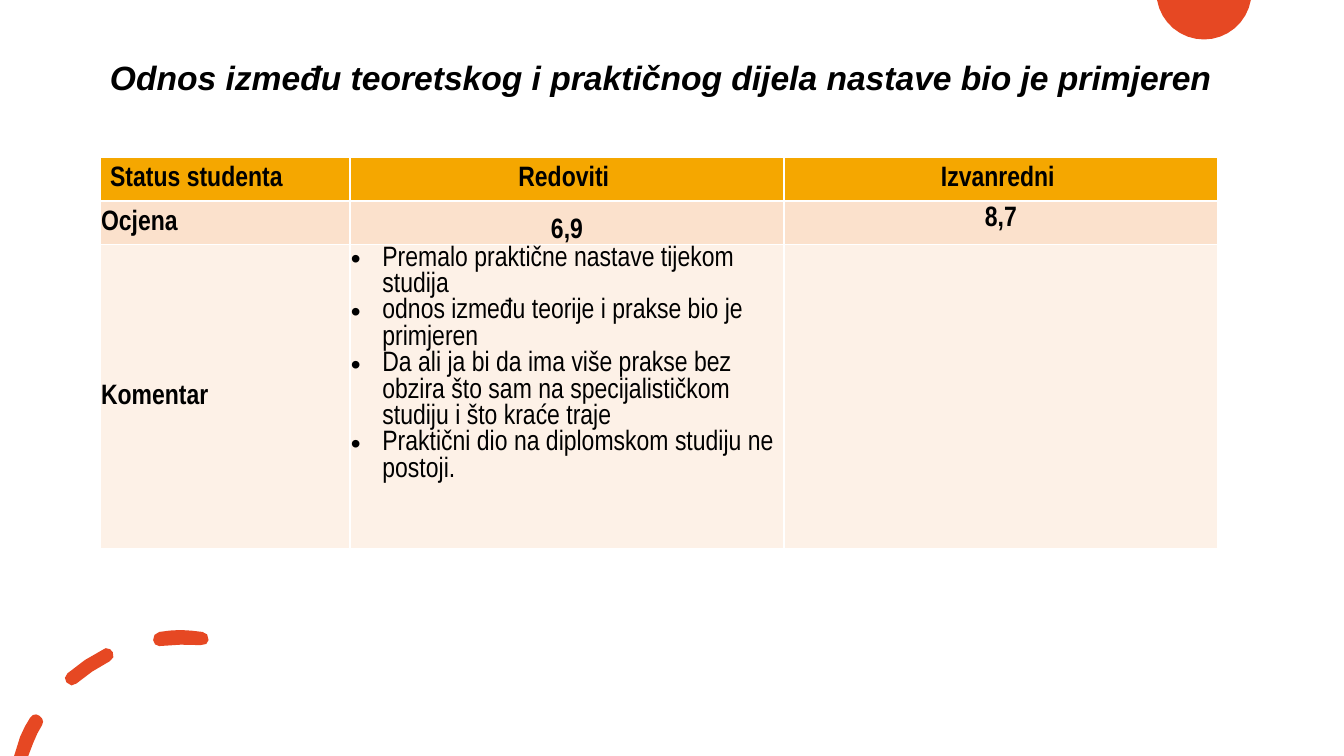
from math import asin, cos, pi, sin

from lxml import etree
from pptx import Presentation
from pptx.dml.color import RGBColor
from pptx.enum.text import MSO_ANCHOR, PP_ALIGN
from pptx.oxml.ns import qn
from pptx.util import Pt

LEFT, CENTER = PP_ALIGN.LEFT, PP_ALIGN.CENTER
TOP, MIDDLE, BOTTOM = MSO_ANCHOR.TOP, MSO_ANCHOR.MIDDLE, MSO_ANCHOR.BOTTOM
BLACK = RGBColor(0x00, 0x00, 0x00)
RED = RGBColor(0xE6, 0x48, 0x23)
AMBER = RGBColor(0xF5, 0xA7, 0x00)
PEACH = RGBColor(0xFB, 0xE1, 0xCC)
CREAM = RGBColor(0xFD, 0xF1, 0xE7)

prs = Presentation()
prs.slide_width, prs.slide_height = Pt(960), Pt(540)
slide = prs.slides.add_slide(prs.slide_layouts[6])


def add_red_outline(*contours):
    """Draw one red shape from closed contours of points."""
    scaled = [[(round(x * 100), round(y * 100)) for x, y in contour] for contour in contours]
    builder = slide.shapes.build_freeform(*scaled[0][0], scale=Pt(1) / 100)
    for i, (start, *rest) in enumerate(scaled):
        if i:
            builder.move_to(*start)
        builder.add_line_segments(rest)
    outline = builder.convert_to_shape()
    outline.shadow.inherit = False
    outline.fill.solid()
    outline.fill.fore_color.rgb = RED
    outline.line.fill.background()


def write(paragraph, text, **font_format):
    run = paragraph.add_run()
    run.text = text
    run.font.color.rgb = BLACK
    for name, value in font_format.items():
        setattr(run.font, name, value)


# Disc cut off by the top edge
DISC_X, DISC_Y, DISC_R = 860, -5.8, 34
STEPS = 16
edge = asin(-DISC_Y / DISC_R)
disc_angles = [edge + (pi - 2 * edge) * i / STEPS for i in range(STEPS + 1)]
add_red_outline([(DISC_X + DISC_R * cos(a), DISC_Y + DISC_R * sin(a)) for a in disc_angles])

# Dashed arc in the bottom left corner
low_dash = [(25.9, 510.3), (23.5, 510.8), (21.6, 512.6), (17.8, 519), (14.4, 526.3), (10.1, 540),
            (20.2, 540), (23.8, 530.6), (26.7, 524), (30.2, 517.7), (30.8, 515.5), (30.2, 513.4),
            (28.1, 511.2)]
middle_dash = [(75.6, 463), (74.2, 463.7), (60.8, 471.4), (48.2, 481), (46.4, 484.2), (47.5, 487.4),
               (51.1, 489.6), (54.7, 488.2), (65.9, 479.7), (78.5, 472.3), (81, 469.5),
               (80.6, 465.8), (78.6, 463.7)]
top_dash = [(128.9, 450), (121.4, 450.4), (113.8, 451.4), (110.4, 453.5), (109.4, 457.2),
            (110.8, 460.3), (113.8, 461.5), (129, 460.5), (143.3, 460.8), (147.4, 460),
            (149, 457.2), (148, 453.2), (144.7, 451.4), (137, 450.5)]
add_red_outline(low_dash, middle_dash, top_dash)

title = slide.shapes.add_textbox(Pt(71.5), Pt(16.4), Pt(828), Pt(81.4)).text_frame
title.word_wrap = True
title.vertical_anchor = MIDDLE
title.paragraphs[0].line_spacing = 0.9
write(title.paragraphs[0], "Odnos između teoretskog i praktičnog dijela nastave bio je primjeren",
      name="Arial", size=Pt(24), bold=True, italic=True)

# Ratings table: each cell is its lines, alignment, anchor and whether its margins are tight
COLUMN_WIDTHS = [178.5, 310, 310]
ROW_HEIGHTS = [18.7, 29.5, 67]
ROW_FILLS = [AMBER, PEACH, CREAM]
COMMENTS = [
    "Premalo praktične nastave tijekom studija",
    "odnos između teorije i prakse bio je primjeren",
    "Da ali ja bi da ima više prakse bez obzira što sam na specijalističkom studiju i što kraće traje",
    "Praktični dio na diplomskom studiju ne postoji.",
]
ratings = [
    [(["Status studenta"], LEFT, MIDDLE, False),
     (["Redoviti "], CENTER, MIDDLE, False),
     (["Izvanredni "], CENTER, MIDDLE, False)],
    [(["Ocjena"], LEFT, MIDDLE, True),
     (["6,9"], CENTER, BOTTOM, True),
     (["8,7"], CENTER, TOP, False)],
    [(["Komentar"], LEFT, MIDDLE, True),
     (COMMENTS, LEFT, TOP, True),
     ([], LEFT, TOP, False)],
]
TIGHT = {"margin_left": Pt(0.7), "margin_right": Pt(0.7), "margin_top": Pt(0.7), "margin_bottom": Pt(0)}
BULLET_INDENT = Pt(22.5)
TABLE_HEIGHT = Pt(279.4)

ratings_frame = slide.shapes.add_table(3, 3, Pt(71.5), Pt(112.3), Pt(sum(COLUMN_WIDTHS)), TABLE_HEIGHT)
table = ratings_frame.table
for column, width in zip(table.columns, COLUMN_WIDTHS):
    column.width = Pt(width)
for row, height in zip(table.rows, ROW_HEIGHTS):
    row.height = Pt(height)
ratings_frame.height = TABLE_HEIGHT

for r, row_cells in enumerate(ratings):
    for c, (lines, alignment, anchor, tight) in enumerate(row_cells):
        cell = table.cell(r, c)
        cell.vertical_anchor = anchor
        cell.fill.solid()
        cell.fill.fore_color.rgb = ROW_FILLS[r]
        for name, value in (TIGHT if tight else {}).items():
            setattr(cell, name, value)

        for i, text in enumerate(lines):
            frame = cell.text_frame
            paragraph = frame.add_paragraph() if i else frame.paragraphs[0]
            paragraph.alignment = alignment
            write(paragraph, text, name="Arial Narrow", size=Pt(20), bold=lines is not COMMENTS)
            if lines is COMMENTS:
                properties = paragraph._p.get_or_add_pPr()
                properties.set("marL", str(BULLET_INDENT))
                properties.set("indent", str(-BULLET_INDENT))
                etree.SubElement(properties, qn("a:buFont")).set("typeface", "Arial")
                etree.SubElement(properties, qn("a:buChar")).set("char", "•")

prs.save("out.pptx")
